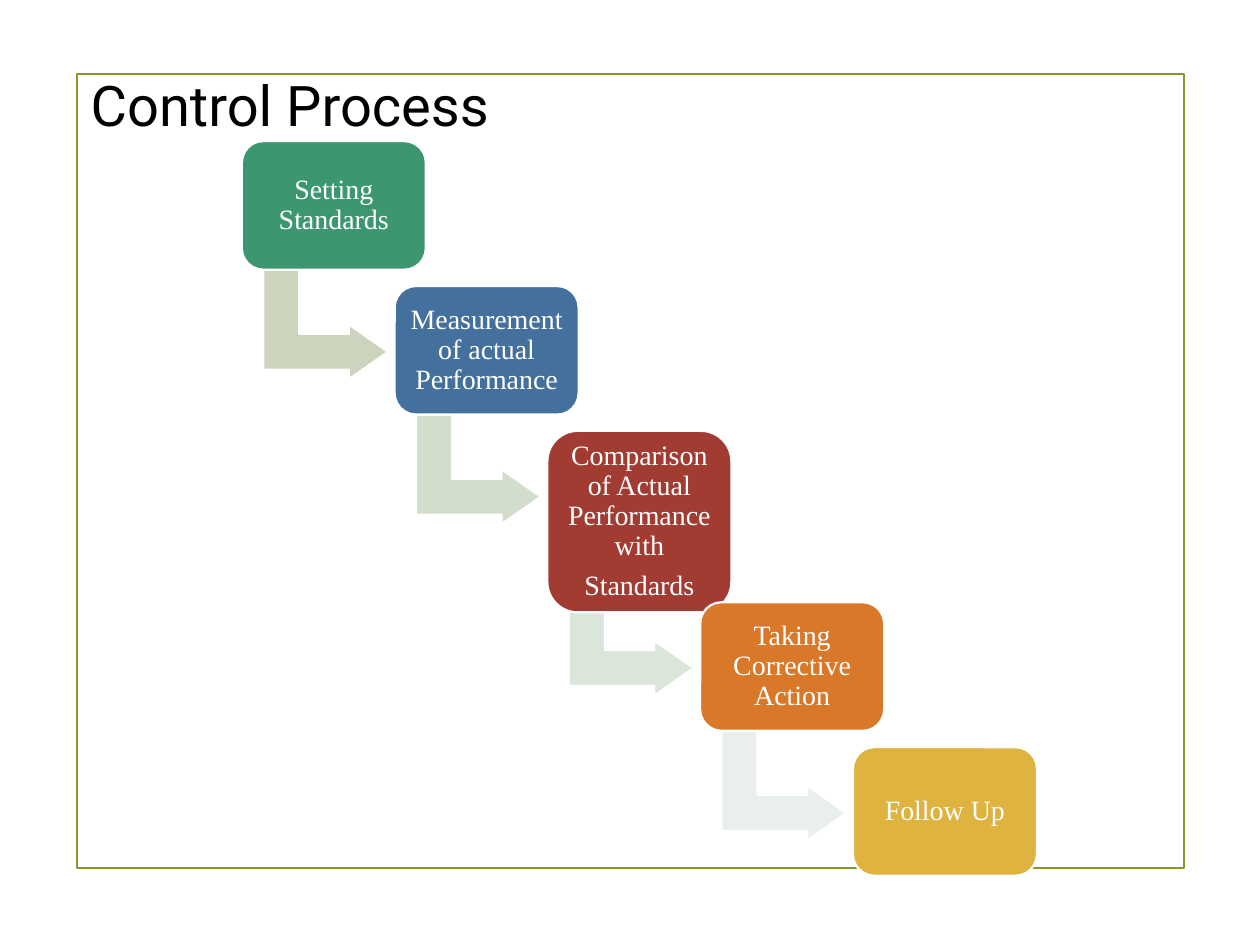
from pptx import Presentation
from pptx.dml.color import RGBColor
from pptx.enum.shapes import MSO_SHAPE
from pptx.enum.text import MSO_ANCHOR, MSO_AUTO_SIZE, PP_ALIGN
from pptx.util import Inches, Pt

RECTANGLE = MSO_SHAPE.RECTANGLE
ROUNDED = MSO_SHAPE.ROUNDED_RECTANGLE
BENT_ARROW = MSO_SHAPE.BENT_UP_ARROW
TITLE_ONLY = 5

STEPS = [
    ("Setting Standards", 1.12, 1.02, "3C9770", "CDD4BE"),
    ("Measurement of actual Performance", 2.27, 1.02, "44709D", "D2DDCC"),
    ("Comparison of Actual Performance with\nStandards", 3.42, 1.44, "A23C33", "DBE6DB"),
    ("Taking Corrective Action", 4.78, 1.02, "D97828", "E9EFEB"),
    ("Follow Up", 5.93, 1.02, "DEB340", None),
]
FIRST_LEFT, STEP_ACROSS, STEP_WIDTH = 1.92, 1.2125, 1.46
ARROW_WIDTH, ARROW_HEIGHT = 0.87, 0.99


def color(hex_value):
    """Turn a hex string into a colour."""
    return RGBColor.from_string(hex_value)


def add_outlined_shape(slide, kind, box, fill, line):
    """Add a flat shape with a thin outline and an optional fill."""
    shape = slide.shapes.add_shape(kind, *map(Inches, box))
    shape.shadow.inherit = False
    if fill:
        shape.fill.solid()
        shape.fill.fore_color.rgb = color(fill)
    else:
        shape.fill.background()
    shape.line.color.rgb = color(line)
    shape.line.width = Pt(1.25)
    return shape


def add_title(slide, text, box):
    """Place and format the title placeholder."""
    title = slide.shapes.title
    title.left, title.top, title.width, title.height = map(Inches, box)
    frame = title.text_frame
    frame.text = text
    frame.word_wrap = False
    frame.auto_size = MSO_AUTO_SIZE.NONE
    frame.vertical_anchor = MSO_ANCHOR.TOP
    paragraph = frame.paragraphs[0]
    paragraph.alignment = PP_ALIGN.LEFT
    font = paragraph.runs[0].font
    font.name, font.size = "Roboto", Pt(32)
    font.color.rgb = color("000000")


def add_step(slide, text, box, fill):
    """Add one rounded step with its centred label."""
    shape = add_outlined_shape(slide, ROUNDED, box, fill, "FFFFFF")
    shape.adjustments[0] = 0.167
    frame = shape.text_frame
    frame.text = text
    frame.word_wrap = True
    frame.vertical_anchor = MSO_ANCHOR.MIDDLE
    frame.margin_left = frame.margin_right = Inches(0.07)
    frame.margin_top = frame.margin_bottom = Inches(0.07)
    for paragraph in frame.paragraphs:
        paragraph.alignment = PP_ALIGN.CENTER
        paragraph.line_spacing = 0.9
        paragraph.space_after = Pt(5.6)
        font = paragraph.runs[0].font
        font.name, font.size = "Times New Roman", Pt(16)
        font.color.rgb = color("FFFFFF")


def add_arrow(slide, box, fill):
    """Add a bent arrow leading down and right to the next step."""
    arrow = add_outlined_shape(slide, BENT_ARROW, box, fill, "FFFFFF")
    arrow.rotation = 90
    for index, value in enumerate((0.328, 0.25, 0.358)):
        arrow.adjustments[index] = value


def add_staircase(slide, left):
    """Lay the steps out as a staircase joined by arrows."""
    for index, (text, top, height, fill, arrow_fill) in enumerate(STEPS):
        step_left = left + index * STEP_ACROSS
        if arrow_fill:
            arrow_top = STEPS[index + 1][1] - 0.19
            box = (step_left + 0.23, arrow_top, ARROW_WIDTH, ARROW_HEIGHT)
            add_arrow(slide, box, arrow_fill)
        add_step(slide, text, (step_left, top, STEP_WIDTH, height), fill)


def main():
    """Build and save the slide."""
    presentation = Presentation()
    presentation.slide_width, presentation.slide_height = Inches(10), Inches(7.5)
    slide = presentation.slides.add_slide(presentation.slide_layouts[TITLE_ONLY])
    add_outlined_shape(slide, RECTANGLE, (0.61, 0.59, 8.79, 6.3), None, "83992A")
    add_title(slide, "Control Process", (0.62, 0.51, 4.07, 0.64))
    add_staircase(slide, FIRST_LEFT)
    presentation.save("out.pptx")


if __name__ == "__main__":
    main()
